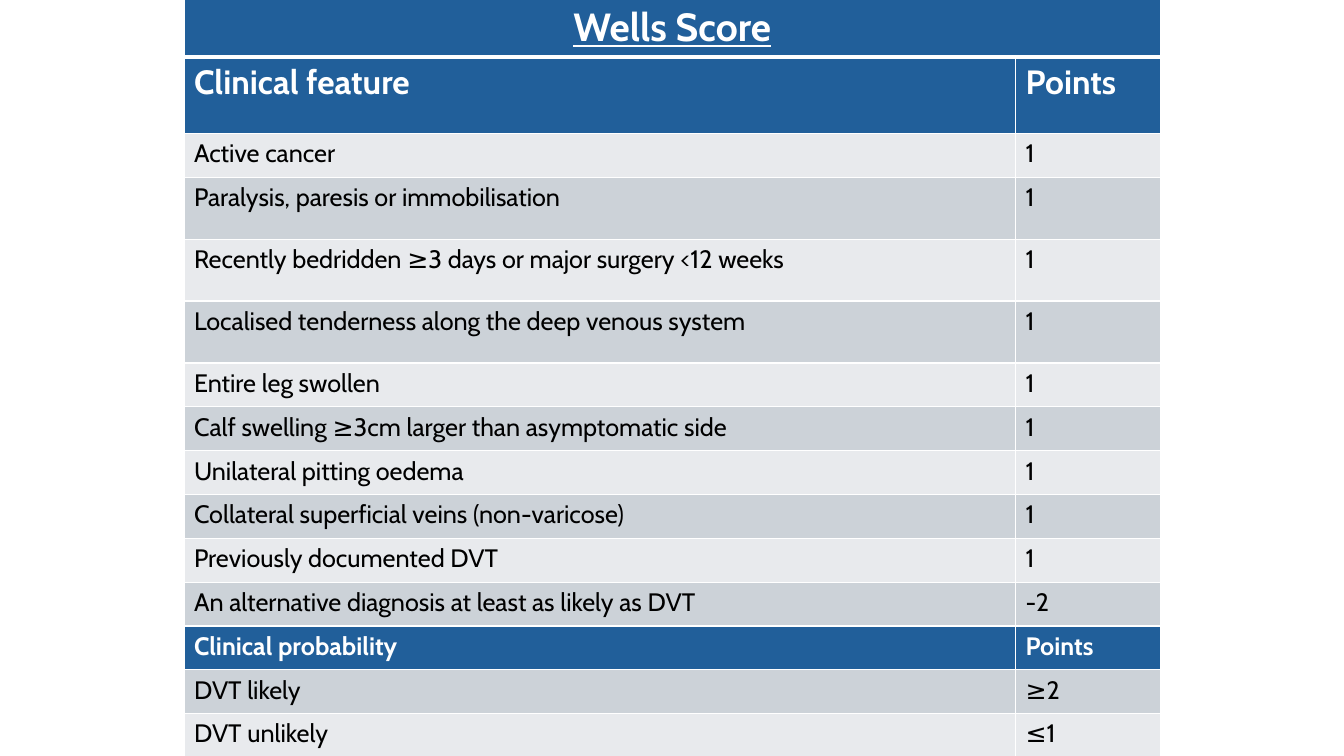
import pptx
import pptx.util
import pptx.dml.color
import pptx.enum.text
import lxml.etree
from dataclasses import dataclass

NS = "http://schemas.openxmlformats.org/drawingml/2006/main"


@dataclass(frozen=True)
class Theme:
    font: str = "Cabin"
    blue: str = "215F9A"
    light: str = "E8EAED"
    dark: str = "CCD2D8"
    white: str = "FFFFFF"
    black: str = "000000"
    title: int = 28
    head: int = 24
    body: int = 18
    thin: int = 1
    thick: int = 3


def px(n):
    return pptx.util.Emu(n * 4572)


def rgb(code):
    return pptx.dml.color.RGBColor.from_string(code)


class Deck:
    def __init__(self, theme, width, height):
        self.theme = theme
        self.show = pptx.Presentation()
        self.show.slide_width = px(width)
        self.show.slide_height = px(height)
        self.slide = self.show.slides.add_slide(self.show.slide_layouts[6])

    def table(self, left, top, cols, rows):
        frame = self.slide.shapes.add_table(
            len(rows), len(cols), px(left), px(top), px(sum(cols)), px(sum(rows)))
        grid = frame.table
        for col, width in zip(grid.columns, cols):
            col.width = px(width)
        for row, height in zip(grid.rows, rows):
            row.height = px(height)
        return grid

    def edges(self, cell, **widths):
        props = cell._tc.get_or_add_tcPr()
        for side in "LRTB":
            width = pptx.util.Pt(widths.get(side, self.theme.thin))
            line = lxml.etree.SubElement(props, f"{{{NS}}}ln{side}", w=str(int(width)))
            fill = lxml.etree.SubElement(line, f"{{{NS}}}solidFill")
            lxml.etree.SubElement(fill, f"{{{NS}}}srgbClr", val=self.theme.white)

    def fill(self, cell, color):
        cell.fill.solid()
        cell.fill.fore_color.rgb = rgb(color)

    def text(self, cell, words, size, color, bold):
        run = cell.text_frame.paragraphs[0].add_run()
        run.text = words
        run.font.name = self.theme.font
        run.font.size = pptx.util.Pt(size)
        run.font.bold = bold
        run.font.color.rgb = rgb(color)
        return run

    def save(self):
        self.show.save("out.pptx")


FEATURES = [
    ("Active cancer", "1"),
    ("Paralysis, paresis or immobilisation", "1"),
    ("Recently bedridden ≥3 days or major surgery <12 weeks", "1"),
    ("Localised tenderness along the deep venous system", "1"),
    ("Entire leg swollen", "1"),
    ("Calf swelling ≥3cm larger than asymptomatic side", "1"),
    ("Unilateral pitting oedema", "1"),
    ("Collateral superficial veins (non-varicose)", "1"),
    ("Previously documented DVT", "1"),
    ("An alternative diagnosis at least as likely as DVT", "-2"),
]
RESULTS = [("DVT likely", "≥2"), ("DVT unlikely", "≤1")]


def main():
    theme = Theme()
    deck = Deck(theme, 2667, 1500)
    data = [("Wells Score", ""), ("Clinical feature", "Points"), *FEATURES,
            ("Clinical probability", "Points"), *RESULTS]
    heads = {0: theme.title, 1: theme.head, 2 + len(FEATURES): theme.body}
    rows = [112, 152, 87] + [123] * 3 + [87] * 9
    grid = deck.table(365, -2, [1650, 288], rows)
    grid.cell(0, 0).merge(grid.cell(0, 1))

    for r, pair in enumerate(data):
        head = r in heads
        band = theme.dark if r % 2 else theme.light
        rule = {0: {"B": theme.thick}, 1: {"T": theme.thick}}.get(r, {})
        for c, words in enumerate(pair):
            cell = grid.cell(r, c)
            deck.edges(cell, **rule)
            deck.fill(cell, theme.blue if head else band)
            if words:
                run = deck.text(cell, words, heads.get(r, theme.body),
                                theme.white if head else theme.black, head)
                run.font.underline = r == 0

    title = grid.cell(0, 0).text_frame.paragraphs[0]
    title.alignment = pptx.enum.text.PP_ALIGN.CENTER
    deck.save()


if __name__ == "__main__":
    main()
